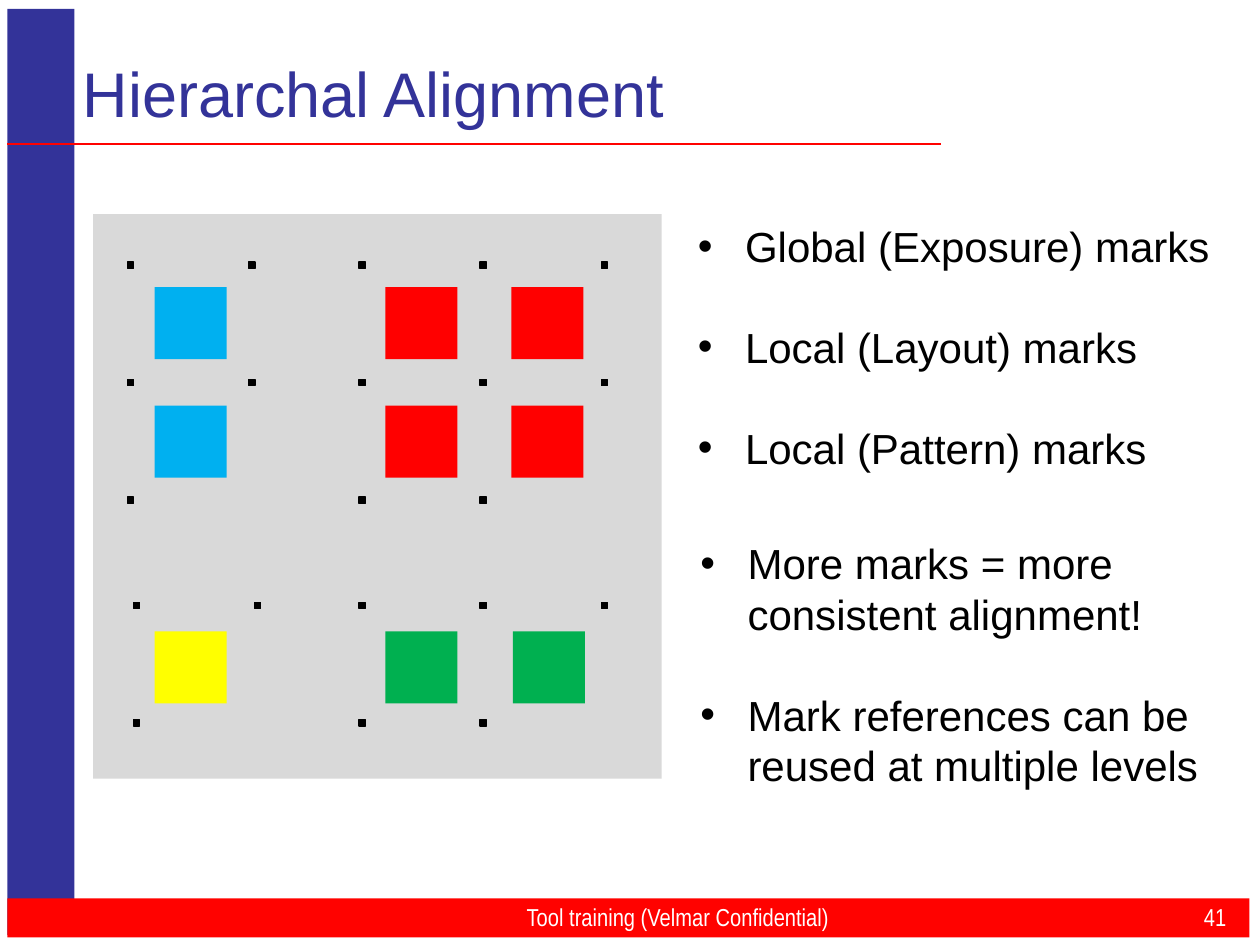
from dataclasses import dataclass

from lxml import etree
from pptx import Presentation
from pptx import util as u
from pptx.dml.color import RGBColor
from pptx.enum import shapes, text
from pptx.oxml.ns import qn


@dataclass(frozen=True)
class Theme:
    navy: str = "333399"
    signal: str = "FF0200"
    ink: str = "000000"
    paper: str = "FFFFFF"
    wafer: str = "D9D9D9"
    red: str = "FF0000"
    green: str = "00B050"
    blue: str = "00B0F0"
    yellow: str = "FFFF00"
    font: str = "Arial"
    narrow: str = "Arial Narrow"
    title_pt: float = 36
    body_pt: float = 24
    footer_pt: float = 14
    item_gap_pt: float = 28.8


class Painter:
    """Draws on one slide; all lengths are in centimetres."""

    def __init__(self, slide, theme):
        self.s = slide
        self.t = theme

    def rect(self, x, y, w, h, color, outline_pt=None):
        sp = self.s.shapes.add_shape(
            shapes.MSO_SHAPE.RECTANGLE, u.Cm(x), u.Cm(y), u.Cm(w), u.Cm(h))
        sp.shadow.inherit = False
        sp.fill.solid()
        sp.fill.fore_color.rgb = RGBColor.from_string(color)
        if outline_pt is None:
            sp.line.fill.background()
        else:
            sp.line.color.rgb = RGBColor.from_string(color)
            sp.line.width = u.Pt(outline_pt)

    def rule(self, x1, x2, y, color, width_pt):
        """Horizontal line."""
        line = self.s.shapes.add_connector(
            shapes.MSO_CONNECTOR.STRAIGHT, u.Cm(x1), u.Cm(y), u.Cm(x2), u.Cm(y))
        line.line.color.rgb = RGBColor.from_string(color)
        line.line.width = u.Pt(width_pt)
        etree.SubElement(line._element.spPr, qn("a:effectLst"))

    def box(self, x, y, w, h, anchor):
        tb = self.s.shapes.add_textbox(u.Cm(x), u.Cm(y), u.Cm(w), u.Cm(h))
        tf = tb.text_frame
        tf.word_wrap = True
        tf.vertical_anchor = anchor
        return tf

    def style(self, p, size, color, font):
        for r in p.runs:
            r.font.size = u.Pt(size)
            r.font.name = font
            r.font.color.rgb = RGBColor.from_string(color)

    def label(self, x, y, w, h, words, size, color, font, align=text.PP_ALIGN.LEFT):
        tf = self.box(x, y, w, h, text.MSO_ANCHOR.MIDDLE)
        tf.text = words
        p = tf.paragraphs[0]
        p.alignment = align
        self.style(p, size, color, font)

    def bullets(self, x, y, w, h, items, indent=0.95):
        tf = self.box(x, y, w, h, text.MSO_ANCHOR.TOP)
        tf.text = "\n".join(items)
        for i, p in enumerate(tf.paragraphs):
            pPr = p._p.get_or_add_pPr()
            pPr.set("marL", str(u.Cm(indent)))
            pPr.set("indent", str(-u.Cm(indent)))
            etree.SubElement(pPr, qn("a:buFont"), typeface=self.t.font)
            etree.SubElement(pPr, qn("a:buChar"), char="•")
            if i:
                p.space_before = u.Pt(self.t.item_gap_pt)
            self.style(p, self.t.body_pt, self.t.ink, self.t.font)

    def die(self, x, y, color):
        self.rect(x, y, 1.45, 1.45, color)

    def marks(self, x, y, row_counts, dx=2.44, dy=2.37):
        """Alignment marks on a grid, with the given number in each row."""
        for row, count in enumerate(row_counts):
            for col in range(count):
                self.rect(x + col * dx, y + row * dy, 0.13, 0.13, self.t.ink, 0.75)


def main():
    prs = Presentation()
    prs.slide_width, prs.slide_height = u.Cm(25.4), u.Cm(19.05)
    t = Theme()
    d = Painter(prs.slides.add_slide(prs.slide_layouts[6]), t)

    # Frame, title and footer
    d.rect(0.15, 0.18, 1.35, 18.67, t.navy)
    d.rect(0.15, 18.11, 25.04, 0.79, t.signal)
    d.rule(0.15, 18.97, 2.9, t.signal, 1)
    d.label(1.42, 0.91, 17.58, 1.9, "Hierarchal Alignment", t.title_pt, t.navy, t.font)
    d.label(6.78, 18.16, 13.77, 0.64, "Tool training (Velmar Confidential)",
            t.footer_pt, t.paper, t.narrow, text.PP_ALIGN.CENTER)
    d.label(22.86, 18.16, 2.11, 0.64, "41",
            t.footer_pt, t.paper, t.narrow, text.PP_ALIGN.RIGHT)

    # Wafer with its dies
    d.rect(1.88, 4.32, 11.46, 11.38, t.wafer)
    left, middle, right = 3.12, 7.77, 10.31
    for y in (5.79, 8.18):
        d.die(left, y, t.blue)
        d.die(middle, y, t.red)
        d.die(right, y, t.red)
    bottom = 12.73
    d.die(left, bottom, t.yellow)
    d.die(middle, bottom, t.green)
    d.die(right + 0.03, bottom, t.green)

    # Marks around each group of dies
    d.marks(2.57, 5.28, (2, 2, 1))
    d.marks(7.24, 5.28, (3, 3, 2))
    d.marks(2.69, 12.14, (2, 1))
    d.marks(7.24, 12.14, (3, 2))

    d.bullets(13.82, 4.32, 10.95, 5.38, (
        "Global (Exposure) marks", "Local (Layout) marks", "Local (Pattern) marks"))
    d.bullets(13.87, 10.72, 11, 5.38, (
        "More marks = more consistent alignment!",
        "Mark references can be reused at multiple levels"))

    prs.save("out.pptx")


if __name__ == "__main__":
    main()
